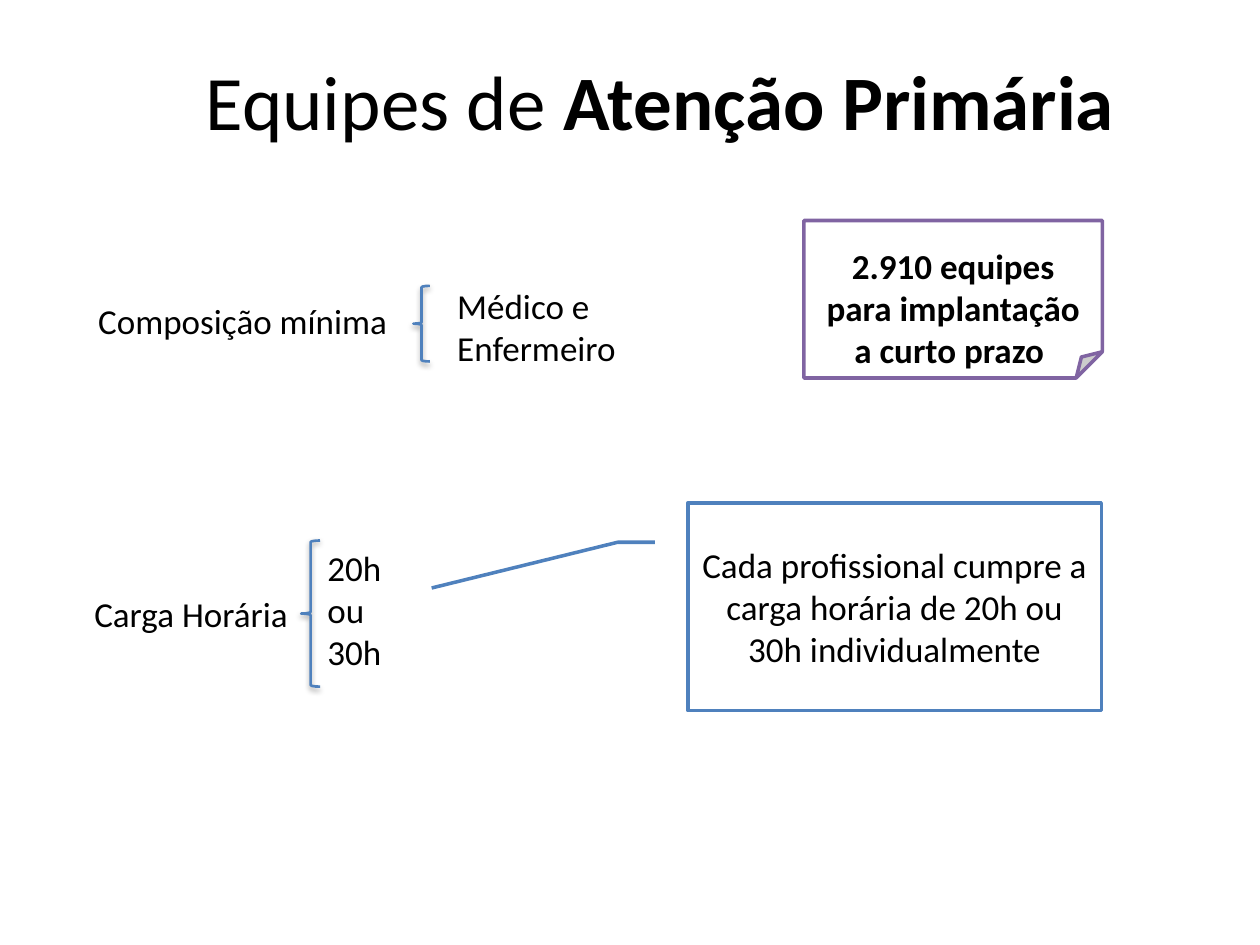
from dataclasses import dataclass

from lxml.etree import SubElement
from pptx import Presentation
from pptx.dml.color import RGBColor
from pptx.enum.shapes import MSO_SHAPE
from pptx.enum.text import MSO_ANCHOR, MSO_AUTO_SIZE, PP_ALIGN
from pptx.oxml.ns import qn
from pptx.util import Pt


@dataclass(frozen=True)
class Theme:
    font: str = "Calibri"
    title_size: int = 44
    body_size: int = 20
    ink: str = "000000"
    paper: str = "FFFFFF"
    blue: str = "4F81BD"
    purple: str = "8064A2"


THEME = Theme()


def rgb(value):
    return RGBColor.from_string(value)


def points(*lengths):
    return [Pt(length) for length in lengths]


def write_text(holder, *paragraphs, size=THEME.body_size, align=PP_ALIGN.LEFT,
               anchor=MSO_ANCHOR.TOP, wrap=True, auto_size=MSO_AUTO_SIZE.NONE,
               top_inset=3.6):
    frame = holder.text_frame
    frame.word_wrap = wrap
    frame.auto_size = auto_size
    frame.vertical_anchor = anchor
    frame.margin_left = frame.margin_right = Pt(7.2)
    frame.margin_top, frame.margin_bottom = points(top_inset, 3.6)
    for index, runs in enumerate(paragraphs):
        paragraph = frame.add_paragraph() if index else frame.paragraphs[0]
        paragraph.alignment = align
        for text, bold in runs:
            run = paragraph.add_run()
            run.text = text
            run.font.name = THEME.font
            run.font.size = Pt(size)
            run.font.bold = bold
            run.font.color.rgb = rgb(THEME.ink)


def add_title(slide, box, *runs):
    title = slide.shapes.title
    title.left, title.top, title.width, title.height = points(*box)
    write_text(title, runs, size=THEME.title_size, align=PP_ALIGN.CENTER,
               anchor=MSO_ANCHOR.MIDDLE)


def add_label(slide, box, *lines, wrap=True):
    label = slide.shapes.add_textbox(*points(*box))
    write_text(label, *[[(line, False)] for line in lines], wrap=wrap,
               auto_size=MSO_AUTO_SIZE.SHAPE_TO_FIT_TEXT)


def add_brace(slide, box):
    brace = slide.shapes.add_shape(MSO_SHAPE.LEFT_BRACE, *points(*box))
    brace.fill.background()
    brace.line.color.rgb = rgb(THEME.blue)
    brace.line.width = Pt(1.5)
    brace.shadow.inherit = False
    effects = brace.element.spPr.find(qn("a:effectLst"))
    shadow = SubElement(effects, qn("a:outerShdw"), blurRad="40000",
                        dist="23000", dir="5400000", rotWithShape="0")
    tint = SubElement(shadow, qn("a:srgbClr"), val=THEME.ink)
    SubElement(tint, qn("a:alpha"), val="35000")


def add_note(slide, preset, box, text, outline, bold=False, top_inset=3.6,
             adjustments=()):
    note = slide.shapes.add_shape(preset, *points(*box))
    note.shadow.inherit = False
    note.fill.solid()
    note.fill.fore_color.rgb = rgb(THEME.paper)
    note.line.color.rgb = rgb(outline)
    note.line.width = Pt(2)
    for index, value in enumerate(adjustments):
        note.adjustments[index] = value
    write_text(note, [(text, bold)], align=PP_ALIGN.CENTER,
               anchor=MSO_ANCHOR.MIDDLE, top_inset=top_inset)


def main():
    presentation = Presentation()
    presentation.slide_width, presentation.slide_height = points(720, 540)
    slide = presentation.slides.add_slide(presentation.slide_layouts[5])

    add_title(slide, (72, 18, 620.6, 78.5),
              ("Equipes de ", False), ("Atenção Primária ", True))

    add_label(slide, (49, 167.8, 185.8, 31.5), "Composição mínima", wrap=False)
    add_brace(slide, (236.2, 163.4, 9.4, 43.2))
    add_label(slide, (254.2, 159.1, 105.8, 80), "Médico e", "Enfermeiro", wrap=False)
    add_note(slide, MSO_SHAPE.FOLDED_CORNER, (459.4, 126, 170.6, 90),
             "2.910 equipes para implantação a curto prazo ", THEME.purple,
             bold=True, top_inset=28)

    add_label(slide, (46.8, 334.8, 146.2, 31.5), "Carga Horária")
    add_brace(slide, (172.1, 308.9, 10.8, 83.5))
    add_label(slide, (180, 308.9, 54.7, 80), "20h ou", "30h")
    add_note(slide, MSO_SHAPE.LINE_CALLOUT_2, (393.1, 287.3, 236.2, 118.8),
             "Cada profissional cumpre a carga horária de 20h ou 30h individualmente",
             THEME.blue, adjustments=(0.19, -0.08, 0.19, -0.17, 0.41, -0.62))

    presentation.save("out.pptx")


if __name__ == "__main__":
    main()
